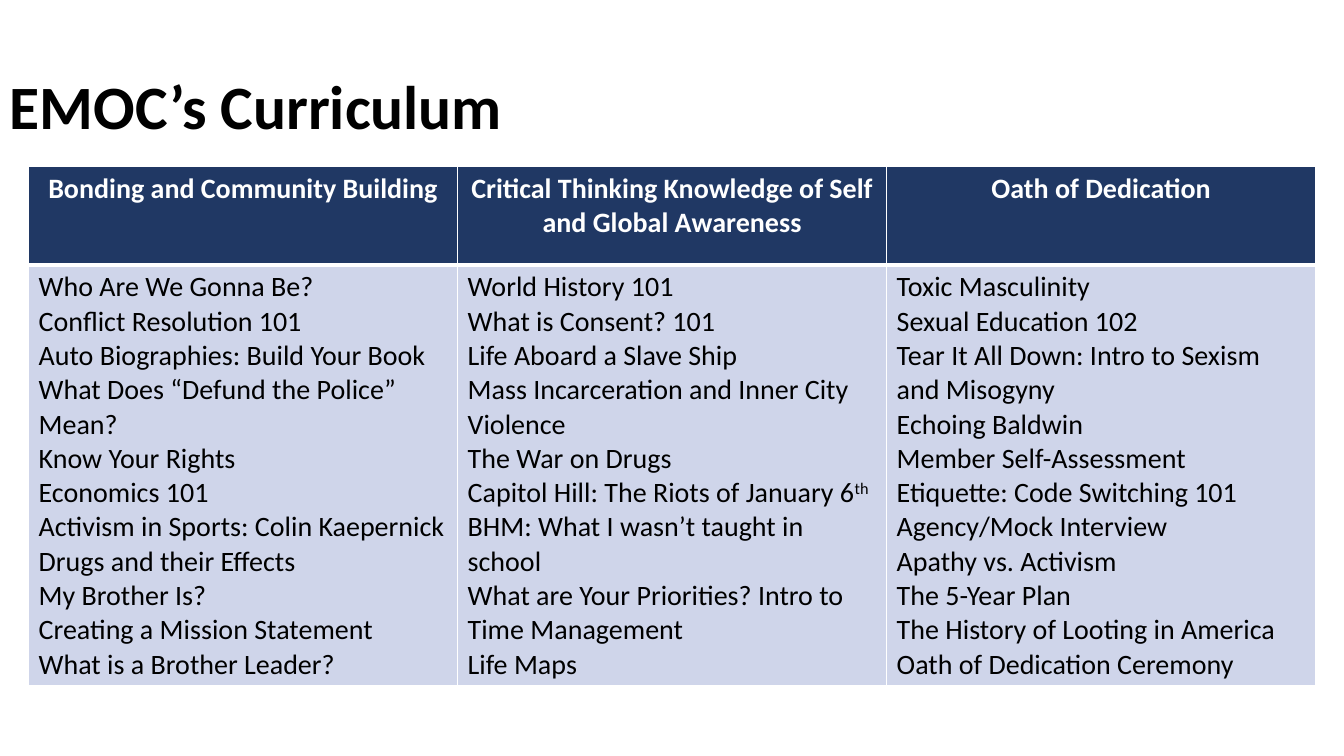
from lxml.etree import SubElement
from pptx import Presentation
from pptx.dml.color import RGBColor
from pptx.enum.text import MSO_ANCHOR as Anchor, PP_ALIGN as Align
from pptx.oxml.ns import qn
from pptx.util import Pt

BLACK = RGBColor(0x00, 0x00, 0x00)
WHITE = RGBColor(0xFF, 0xFF, 0xFF)
NAVY = RGBColor(0x20, 0x38, 0x64)
PALE_BLUE = RGBColor(0xCF, 0xD5, 0xEA)

CURRICULUM = {
    "Bonding and Community Building": [
        "Who Are We Gonna Be?",
        "Conflict Resolution 101",
        "Auto Biographies: Build Your Book",
        "What Does “Defund the Police” Mean?",
        "Know Your Rights",
        "Economics 101",
        "Activism in Sports: Colin Kaepernick",
        "Drugs and their Effects",
        "My Brother Is?",
        "Creating a Mission Statement",
        "What is a Brother Leader?",
    ],
    "Critical Thinking Knowledge of Self and Global Awareness": [
        "World History 101",
        "What is Consent? 101",
        "Life Aboard a Slave Ship",
        "Mass Incarceration and Inner City Violence",
        "The War on Drugs",
        ("Capitol Hill: The Riots of January 6", "th"),
        "BHM: What I wasn’t taught in school",
        "What are Your Priorities? Intro to Time Management",
        "Life Maps",
    ],
    "Oath of Dedication": [
        "Toxic Masculinity",
        "Sexual Education 102",
        "Tear It All Down: Intro to Sexism and Misogyny",
        "Echoing Baldwin",
        "Member Self-Assessment",
        "Etiquette: Code Switching 101",
        "Agency/Mock Interview",
        "Apathy vs. Activism",
        "The 5-Year Plan",
        "The History of Looting in America",
        "Oath of Dedication Ceremony",
    ],
}


class SlideBuilder:
    font_name = "Calibri"
    text_size = 20

    def __init__(self, slide):
        self.slide = slide

    def run(self, paragraph, text, size, color, bold=False, raised=False):
        run = paragraph.add_run()
        run.text = text
        font = run.font
        font.name, font.size, font.bold = self.font_name, Pt(size), bold
        font.color.rgb = color
        if raised:
            run._r.get_or_add_rPr().set("baseline", "30000")

    def title(self, text, left, top, width, height):
        box = self.slide.shapes.add_textbox(Pt(left), Pt(top), Pt(width), Pt(height))
        frame = box.text_frame
        frame.word_wrap = True
        frame.vertical_anchor = Anchor.MIDDLE
        paragraph = frame.paragraphs[0]
        paragraph.line_spacing = 0.9
        self.run(paragraph, text, 44, BLACK, bold=True)

    def borders(self, cell, top=1, bottom=1):
        properties = cell._tc.get_or_add_tcPr()
        for side, weight in (("L", 1), ("R", 1), ("T", top), ("B", bottom)):
            line = SubElement(properties, qn(f"a:ln{side}"), w=str(Pt(weight)))
            fill = SubElement(line, qn("a:solidFill"))
            SubElement(fill, qn("a:srgbClr"), val=str(WHITE))

    def cell(self, cell, lines, fill, color, align, bold=False, **border_weights):
        self.borders(cell, **border_weights)
        cell.fill.solid()
        cell.fill.fore_color.rgb = fill
        frame = cell.text_frame
        for index, line in enumerate(lines):
            paragraph = frame.add_paragraph() if index else frame.paragraphs[0]
            paragraph.alignment = align
            parts = (line,) if isinstance(line, str) else line
            for position, part in enumerate(parts):
                self.run(paragraph, part, self.text_size, color, bold, raised=position > 0)

    def table(self, columns, left, top, width, row_heights):
        frame = self.slide.shapes.add_table(
            len(row_heights), len(columns), Pt(left), Pt(top), Pt(width), Pt(sum(row_heights))
        )
        table = frame.table
        for row, height in zip(table.rows, row_heights):
            row.height = Pt(height)
        for index, (theme, sessions) in enumerate(columns.items()):
            table.columns[index].width = Pt(width / len(columns))
            self.cell(table.cell(0, index), [theme], NAVY, WHITE, Align.CENTER, bold=True, bottom=3)
            self.cell(table.cell(1, index), sessions, PALE_BLUE, BLACK, Align.LEFT, top=3)


def main():
    deck = Presentation()
    deck.slide_width, deck.slide_height = Pt(960), Pt(540)
    builder = SlideBuilder(deck.slides.add_slide(deck.slide_layouts[6]))
    builder.title("EMOC’s Curriculum", 0, 26, 828, 104.4)
    builder.table(CURRICULUM, 20.4, 119, 919.4, (70.4, 300))
    deck.save("out.pptx")


if __name__ == "__main__":
    main()
